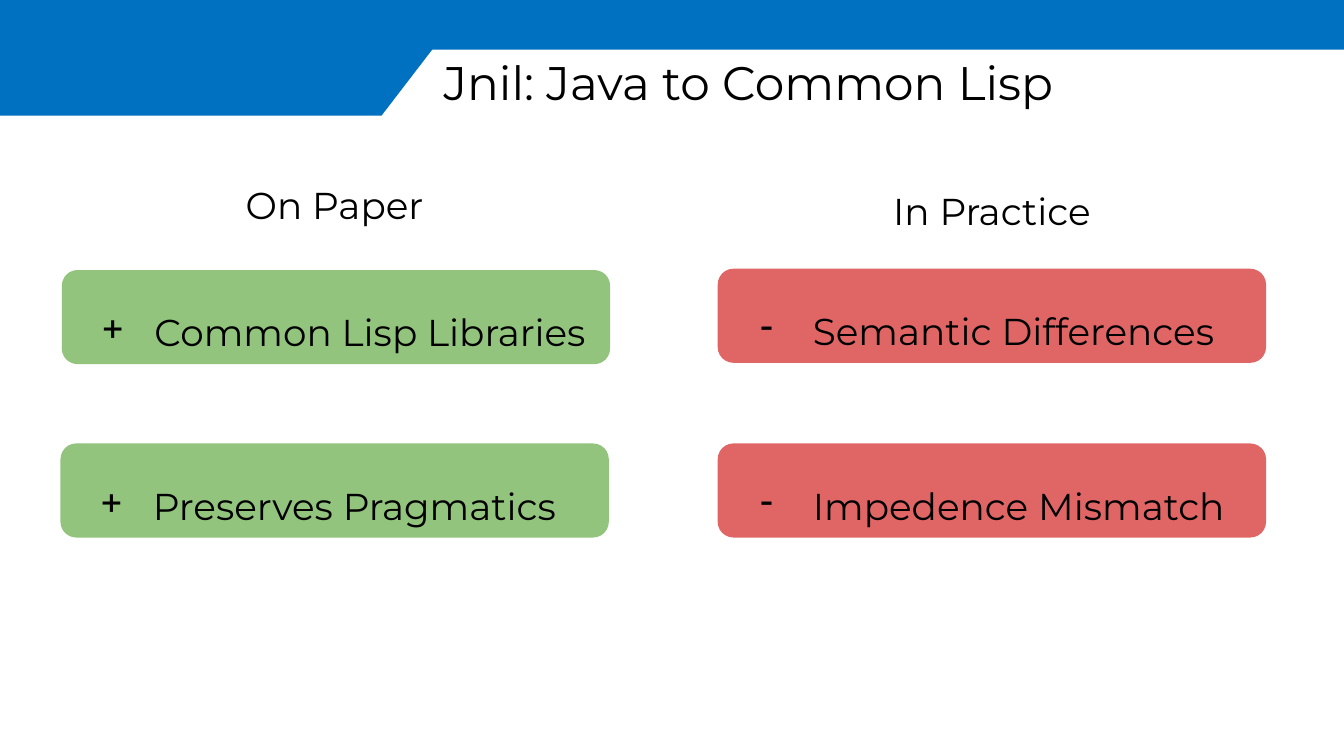
"""Build the slide that weighs Jnil on paper against Jnil in practice."""
from lxml.etree import SubElement
from pptx import Presentation
from pptx.dml.color import RGBColor as Color
from pptx.enum.shapes import MSO_SHAPE as Shape
from pptx.enum.text import MSO_ANCHOR as Anchor, MSO_AUTO_SIZE as Fit, PP_ALIGN as Align
from pptx.oxml.ns import qn
from pptx.util import Inches, Pt

TITLE = "Jnil: Java to Common Lisp"
SIDES = [
    {"head": "On Paper", "top": 1.33, "sign": "+", "fill": "good", "inset": 0.09, "wide": 4.17,
     "cards": [("Common Lisp Libraries", 0.46, 2.01), ("Preserves Pragmatics", 0.45, 3.3)]},
    {"head": "In Practice", "top": 1.37, "sign": "-", "fill": "bad", "inset": 0.11, "wide": 4.1,
     "cards": [("Semantic Differences", 5.34, 2), ("Impedence Mismatch", 5.34, 3.3)]},
]
THEME = {"font": "Montserrat", "ink": "000000", "band": "0070C0",
         "good": "93C47D", "bad": "E06666", "title": 25.2, "body": 20}
CARD_W, CARD_H = 4.08, 0.7
BAND = [(0, 0), (3.5, 0), (2.84, 0.86), (0, 0.86)]


def paint(shape, name):
    shape.shadow.inherit = False
    shape.fill.solid()
    shape.fill.fore_color.rgb = Color.from_string(THEME[name])
    shape.line.fill.background()


def write(shape, text, size, align=Align.LEFT, anchor=Anchor.TOP):
    frame = shape.text_frame
    frame.text = text
    frame.word_wrap = True
    frame.auto_size = Fit.NONE
    frame.vertical_anchor = anchor
    frame.margin_left = frame.margin_right = Inches(0.1)
    frame.margin_top = frame.margin_bottom = Inches(0.1)
    para = frame.paragraphs[0]
    para.alignment = align
    font = para.runs[0].font
    font.name, font.size = THEME["font"], Pt(THEME[size])
    font.color.rgb = Color.from_string(THEME["ink"])
    return para


def add_sign(para, sign):
    props = para._p.get_or_add_pPr()
    props.set("marL", str(Inches(0.5)))
    props.set("indent", str(Inches(-0.39)))
    tint = SubElement(props, qn("a:buClr"))
    SubElement(tint, qn("a:srgbClr")).set("val", THEME["ink"])
    SubElement(props, qn("a:buChar")).set("char", sign)
    para.line_spacing = 2.0


def add_card(slide, side, text, left, top):
    group = slide.shapes.add_group_shape().shapes
    card = group.add_shape(Shape.ROUNDED_RECTANGLE, Inches(left), Inches(top),
                           Inches(CARD_W), Inches(CARD_H))
    card.adjustments[0] = 0.167
    paint(card, side["fill"])
    label = group.add_textbox(Inches(left + side["inset"]), Inches(top - 0.14),
                              Inches(side["wide"]), Inches(0.77))
    add_sign(write(label, text, "body"), side["sign"])
    label.text_frame.auto_size = Fit.SHAPE_TO_FIT_TEXT


def add_band(slide):
    points = [(Inches(x), Inches(y)) for x, y in BAND]
    path = slide.shapes.build_freeform(*points[0])
    path.add_line_segments(points[1:])
    paint(path.convert_to_shape(), "band")
    strip = slide.shapes.add_shape(Shape.RECTANGLE, Inches(2.93), 0, Inches(7.07), Inches(0.37))
    paint(strip, "band")


def main():
    deck = Presentation()
    deck.slide_width = Inches(10)
    deck.slide_height = deck.slide_width * 9 // 16
    slide = deck.slides.add_slide(deck.slide_layouts[5])
    add_band(slide)
    title = slide.shapes.title
    title.left, title.top = Inches(3.2), Inches(0.3)
    title.width, title.height = Inches(6.67), Inches(0.63)
    write(title, TITLE, "title")
    for side in SIDES:
        left = min(x for _, x, _ in side["cards"])
        head = slide.shapes.add_textbox(Inches(left), Inches(side["top"]),
                                        Inches(CARD_W), Inches(0.39))
        write(head, side["head"], "body", Align.CENTER, Anchor.MIDDLE)
        for card in side["cards"]:
            add_card(slide, side, *card)
    deck.save("out.pptx")


if __name__ == "__main__":
    main()
